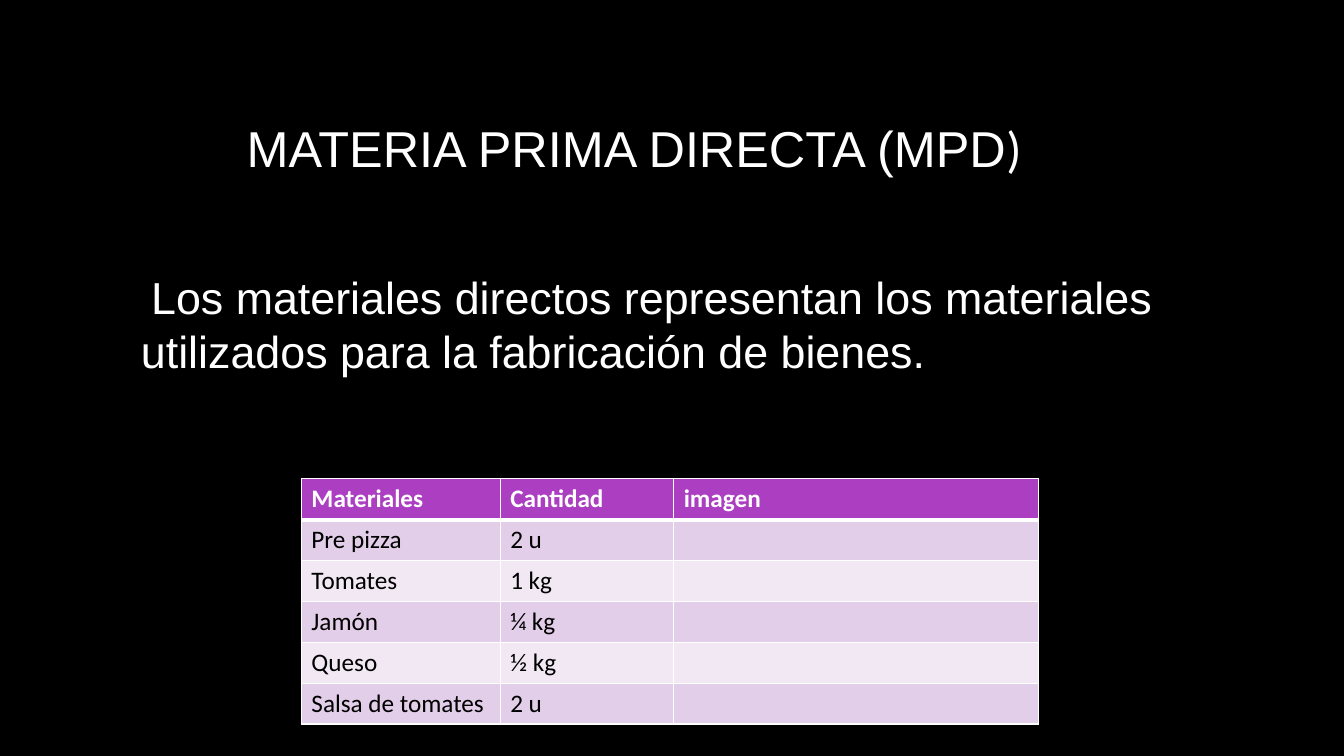
import dataclasses

import lxml.etree
import pptx
import pptx.dml.color
import pptx.enum.text
import pptx.oxml.ns
import pptx.util

Pt = pptx.util.Pt
WHITE, BLACK = "FFFFFF", "000000"
HEAD = "AC3EC1"
BANDS = ("E3CEE9", "F1E8F4")
WIDTHS = (142, 124, 260.5)
ROW = 29.2


@dataclasses.dataclass
class Run:
    text: str
    size: float
    font: str
    color: str = WHITE
    bold: bool = False


@dataclasses.dataclass
class Item:
    name: str
    count: str
    image: str = ""


ITEMS = (
    Item("Materiales", "Cantidad", "imagen"),
    Item("Pre pizza", "2 u"),
    Item("Tomates", "1 kg"),
    Item("Jamón", "¼ kg"),
    Item("Queso", "½ kg"),
    Item("Salsa de tomates", "2 u"),
)


def paint(target, color: str) -> None:
    """Set a solid colour on a fill or a font."""
    if hasattr(target, "solid"):
        target.solid()
        target.fore_color.rgb = pptx.dml.color.RGBColor.from_string(color)
    else:
        target.color.rgb = pptx.dml.color.RGBColor.from_string(color)


def write(para, runs: list[Run]) -> None:
    for item in runs:
        run = para.add_run()
        run.text = item.text
        run.font.size = Pt(item.size)
        run.font.name = item.font
        run.font.bold = item.bold
        paint(run.font, item.color)


def place(shape, left: float, top: float, width: float, height: float) -> None:
    shape.left, shape.top = Pt(left), Pt(top)
    shape.width, shape.height = Pt(width), Pt(height)


def edge(cell, sides: dict[str, float]) -> None:
    """Draw white cell borders; they must come before the fill."""
    props = cell._tc.get_or_add_tcPr()
    for index, (side, width) in enumerate(sides.items()):
        line = lxml.etree.Element(pptx.oxml.ns.qn(f"a:ln{side}"), w=str(Pt(width)))
        fill = lxml.etree.SubElement(line, pptx.oxml.ns.qn("a:solidFill"))
        lxml.etree.SubElement(fill, pptx.oxml.ns.qn("a:srgbClr"), val=WHITE)
        props.insert(index, line)


def main() -> None:
    deck = pptx.Presentation()
    deck.slide_width, deck.slide_height = Pt(960), Pt(540)
    slide = deck.slides.add_slide(deck.slide_layouts[5])
    paint(slide.background.fill, BLACK)

    # Title
    title = slide.shapes.title
    place(title, 54, 48.2, 798, 114.5)
    title.text_frame.vertical_anchor = pptx.enum.text.MSO_ANCHOR.MIDDLE
    para = title.text_frame.paragraphs[0]
    para.alignment = pptx.enum.text.PP_ALIGN.CENTER
    write(para, [Run("MATERIA PRIMA DIRECTA (MPD", 36, "Arial"),
                 Run(")", 36, "Calibri")])

    # Table of materials
    frame = slide.shapes.add_table(len(ITEMS), len(WIDTHS), Pt(215.3), Pt(342),
                                   Pt(sum(WIDTHS)), Pt(ROW * len(ITEMS)))
    table = frame.table
    for col, width in zip(table.columns, WIDTHS):
        col.width = Pt(width)
    for r, item in enumerate(ITEMS):
        table.rows[r].height = Pt(ROW)
        head = r == 0
        for c, text in enumerate(dataclasses.astuple(item)):
            cell = table.cell(r, c)
            paint(cell.fill, HEAD if head else BANDS[(r - 1) % 2])
            edge(cell, {"L": 1, "R": 1, "T": 3 if r == 1 else 1, "B": 3 if head else 1})
            para = cell.text_frame.paragraphs[0]
            if text:
                write(para, [Run(text, 18, "Calibri", WHITE if head else BLACK, head)])
            else:
                para.font.size = Pt(18)

    # Definition
    box = slide.shapes.add_textbox(Pt(93.6), Pt(189.4), Pt(769), Pt(85))
    box.text_frame.word_wrap = True
    write(box.text_frame.paragraphs[0], [
        Run(" ", 32, "Calibri"),
        Run("Los materiales directos representan los materiales utilizados "
            "para la fabricación de bienes.", 32, "Arial")])

    deck.save("out.pptx")


if __name__ == "__main__":
    main()
